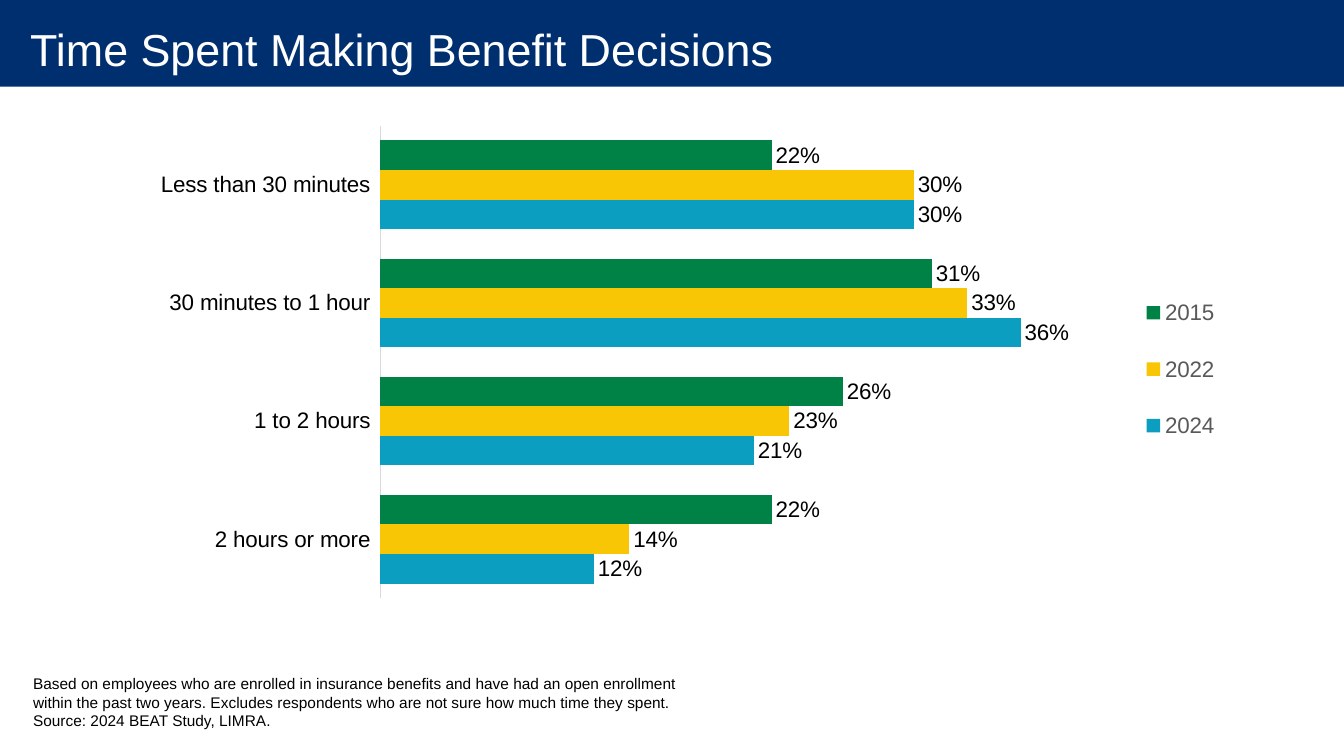
from lxml import etree
from pptx import Presentation
from pptx.chart.data import CategoryChartData
from pptx.dml.color import RGBColor
from pptx.enum.chart import XL_CHART_TYPE as ChartType
from pptx.enum.chart import XL_LABEL_POSITION as LabelPosition
from pptx.enum.chart import XL_LEGEND_POSITION as LegendPosition
from pptx.enum.chart import XL_TICK_LABEL_POSITION as TickLabelPosition
from pptx.enum.chart import XL_TICK_MARK as TickMark
from pptx.enum.shapes import MSO_SHAPE as ShapeType
from pptx.enum.text import MSO_ANCHOR as Anchor
from pptx.enum.text import MSO_AUTO_SIZE as AutoSize
from pptx.enum.text import PP_ALIGN as Align
from pptx.oxml import parse_xml
from pptx.oxml.ns import nsdecls, qn
from pptx.util import Inches, Pt

NAVY = RGBColor(0x00, 0x2F, 0x70)
WHITE = RGBColor(0xFF, 0xFF, 0xFF)
BLACK = RGBColor(0x00, 0x00, 0x00)
GRAY = RGBColor(0x59, 0x59, 0x59)
LIGHT_GRAY = RGBColor(0xD9, 0xD9, 0xD9)
BLUE = RGBColor(0x0B, 0x9E, 0xC1)
YELLOW = RGBColor(0xF9, 0xC6, 0x06)
GREEN = RGBColor(0x00, 0x81, 0x45)
FONT = "Arial"

TITLE = "Time Spent Making Benefit Decisions"
CATEGORIES = ["2 hours or more", "1 to 2 hours", "30 minutes to 1 hour", "Less than 30 minutes"]
SERIES = [
    ("2024", BLUE, (0.12, 0.21, 0.36, 0.30)),
    ("2022", YELLOW, (0.14, 0.23, 0.33, 0.30)),
    ("2015", GREEN, (0.22, 0.26, 0.31, 0.22)),
]
NOTES = [
    "Based on employees who are enrolled in insurance benefits and have had an open enrollment "
    "within the past two years. Excludes respondents who are not sure how much time they spent.",
    "Source: 2024 BEAT Study, LIMRA.",
]
PLOT_LAYOUT = (0.273, 0.02, 0.611, 0.961)
LEGEND_LAYOUT = (0.92, 0.31, 0.08, 0.41)


def set_font(font, size, color):
    font.name = FONT
    font.size = Pt(size)
    font.color.rgb = color


def make_layout(box, inner=False):
    layout = parse_xml(f"<c:layout {nsdecls('c')}><c:manualLayout/></c:layout>")
    settings = [("layoutTarget", "inner")] if inner else []
    settings += [("xMode", "edge"), ("yMode", "edge")]
    settings += zip("xywh", box)
    for name, value in settings:
        etree.SubElement(layout[0], qn(f"c:{name}")).set("val", str(value))
    return layout


def replace_layout(parent, layout, predecessor=None):
    for old_layout in parent.findall(qn("c:layout")):
        parent.remove(old_layout)
    if predecessor is None:
        parent.insert(0, layout)
    else:
        predecessor.addnext(layout)


def add_header(slide, width):
    band = slide.shapes.add_shape(ShapeType.RECTANGLE, 0, 0, width, Inches(0.86))
    band.shadow.inherit = False
    band.fill.solid()
    band.fill.fore_color.rgb = NAVY
    band.line.fill.background()

    title = slide.shapes.title
    band.element.addnext(title.element)
    title.left, title.top, title.width, title.height = 0, 0, width, Inches(0.97)
    frame = title.text_frame
    frame.text = TITLE
    frame.word_wrap = False
    frame.auto_size = AutoSize.NONE
    frame.vertical_anchor = Anchor.MIDDLE
    frame.margin_left, frame.margin_right = Inches(0.3), Inches(0.2)
    frame.margin_top = frame.margin_bottom = 0
    paragraph = frame.paragraphs[0]
    paragraph.alignment = Align.LEFT
    set_font(paragraph.font, 32, WHITE)


def add_time_chart(slide):
    data = CategoryChartData(number_format="0%")
    data.categories = CATEGORIES
    for name, _, values in SERIES:
        data.add_series(name, values)
    chart = slide.shapes.add_chart(
        ChartType.BAR_CLUSTERED, Inches(0.62), Inches(1.15), Inches(11.55), Inches(4.88), data
    ).chart
    chart.has_title = False
    set_font(chart.font, 16, BLACK)

    category_axis = chart.category_axis
    category_axis.major_tick_mark = TickMark.NONE
    category_axis.minor_tick_mark = TickMark.NONE
    category_axis.tick_label_position = TickLabelPosition.LOW
    category_axis.format.line.color.rgb = LIGHT_GRAY
    category_axis.format.line.width = Pt(0.75)
    set_font(category_axis.tick_labels.font, 16, BLACK)

    value_axis = chart.value_axis
    value_axis.minimum_scale, value_axis.maximum_scale = 0, 0.4
    value_axis.has_major_gridlines = False
    value_axis.visible = False

    plot = chart.plots[0]
    plot.gap_width = 100
    plot.overlap = 0
    plot.vary_by_categories = False
    for series, (_, color, _) in zip(plot.series, SERIES):
        series.format.fill.solid()
        series.format.fill.fore_color.rgb = color
        labels = series.data_labels
        labels.show_value = True
        labels.position = LabelPosition.OUTSIDE_END
        labels.number_format = "0%"
        labels.number_format_is_linked = False
        set_font(labels.font, 16, BLACK)

    chart.has_legend = True
    legend = chart.legend
    legend.position = LegendPosition.RIGHT
    legend.include_in_layout = False
    set_font(legend.font, 16, GRAY)

    chart_element = chart.element.find(qn("c:chart"))
    replace_layout(chart_element.find(qn("c:plotArea")), make_layout(PLOT_LAYOUT, inner=True))
    legend_element = chart_element.find(qn("c:legend"))
    replace_layout(
        legend_element, make_layout(LEGEND_LAYOUT), legend_element.find(qn("c:legendPos"))
    )


def add_notes_text(slide):
    box = slide.shapes.add_textbox(Inches(0.23), Inches(6.64), Inches(6.7), Inches(0.66))
    frame = box.text_frame
    frame.word_wrap = True
    frame.auto_size = AutoSize.SHAPE_TO_FIT_TEXT
    frame.text = "\n".join(NOTES)
    for paragraph in frame.paragraphs:
        set_font(paragraph.font, 11, BLACK)


def main():
    presentation = Presentation()
    presentation.slide_width = Inches(13.33)
    presentation.slide_height = Inches(7.5)
    slide = presentation.slides.add_slide(presentation.slide_layouts[5])
    add_header(slide, presentation.slide_width)
    add_time_chart(slide)
    add_notes_text(slide)
    presentation.save("out.pptx")


if __name__ == "__main__":
    main()
